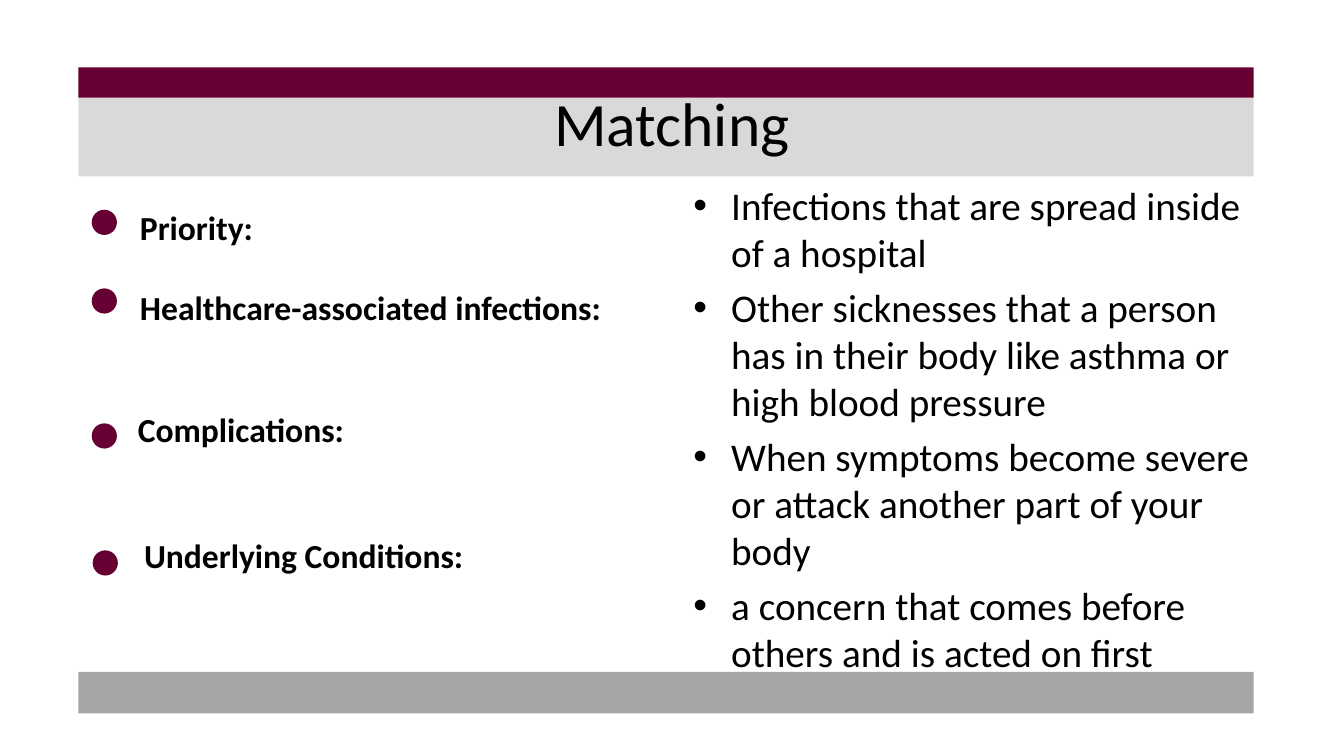
from lxml import etree
from pptx import Presentation
from pptx.dml.color import RGBColor
from pptx.enum.shapes import MSO_SHAPE
from pptx.enum.text import MSO_ANCHOR, PP_ALIGN
from pptx.oxml.ns import qn
from pptx.util import Pt

MAROON = "660033"


def add_filled(preset, left, top, width, height, color):
    shape = slide.shapes.add_shape(preset, Pt(left), Pt(top), Pt(width), Pt(height))
    shape.shadow.inherit = False
    shape.fill.solid()
    shape.fill.fore_color.rgb = RGBColor.from_string(color)
    shape.line.fill.background()


def add_text(paragraph, text, size, bold=False):
    run = paragraph.add_run()
    run.text = text
    run.font.name = "Calibri"
    run.font.size = Pt(size)
    run.font.bold = bold
    run.font.color.rgb = RGBColor.from_string("000000")


deck = Presentation()
deck.slide_width, deck.slide_height = Pt(960), Pt(540)
slide = deck.slides.add_slide(deck.slide_layouts[5])

# Header and footer bands
for top, height, color in [(69.8, 56.2, "D9D9D9"), (480, 29.5, "A6A6A6"), (48.2, 21.6, MAROON)]:
    add_filled(MSO_SHAPE.RECTANGLE, 56, top, 839.5, height, color)

# Title, brought in front of the bands
title = slide.shapes.title
slide.shapes._spTree.append(title._element)
title.left, title.top, title.width, title.height = Pt(48), Pt(21.6), Pt(864), Pt(131)
title.text_frame.vertical_anchor = MSO_ANCHOR.MIDDLE
heading = title.text_frame.paragraphs[0]
heading.alignment = PP_ALIGN.CENTER
add_text(heading, "Matching", 44)

# Definitions on the right
definitions = [
    "Infections that are spread inside of a hospital",
    "Other sicknesses that a person has in their body like asthma or high blood pressure",
    "When symptoms become severe or attack another part of your body",
    "a concern that comes before others and is acted on first",
]
definition_frame = slide.shapes.add_textbox(Pt(488.2), Pt(126), Pt(424), Pt(356.4)).text_frame
definition_frame.word_wrap = True
for index, definition in enumerate(definitions):
    paragraph = definition_frame.add_paragraph() if index else definition_frame.paragraphs[0]
    paragraph.space_before = Pt(5.6)
    properties = paragraph._p.get_or_add_pPr()
    properties.set("marL", str(Pt(27)))
    properties.set("indent", str(-Pt(27)))
    etree.SubElement(properties, qn("a:buFont")).set("typeface", "Arial")
    etree.SubElement(properties, qn("a:buChar")).set("char", "•")
    add_text(paragraph, definition, 28)

# Terms on the left, each with a dot: term, left, top, dot left, dot top
terms = [
    ("Priority:", 92.9, 144, 65.5, 149.8),
    ("Healthcare-associated infections:", 92.9, 201.6, 65.5, 206),
    ("Complications:", 91.4, 288.7, 65.5, 302.4),
    ("Underlying Conditions:", 95.8, 378.7, 66.2, 393.1),
]
for term, left, top, dot_left, dot_top in terms:
    add_filled(MSO_SHAPE.OVAL, dot_left, dot_top, 18, 18, MAROON)
    term_frame = slide.shapes.add_textbox(Pt(left), Pt(top), Pt(380), Pt(36)).text_frame
    term_frame.word_wrap = True
    add_text(term_frame.paragraphs[0], term, 24, bold=True)

deck.save("out.pptx")
